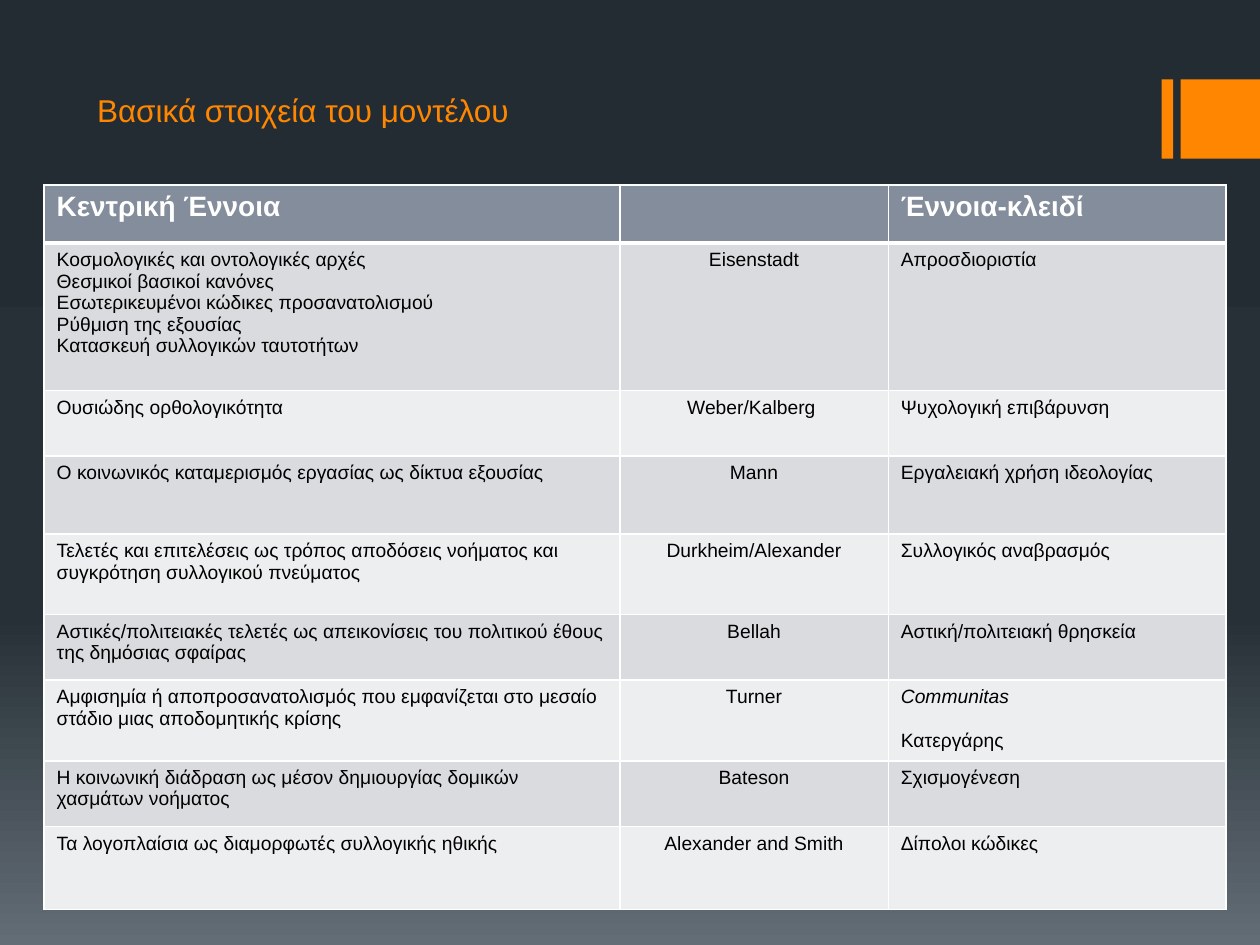
from copy import deepcopy
from dataclasses import dataclass

from lxml.etree import SubElement
from pptx import Presentation
from pptx.dml.color import RGBColor
from pptx.enum.shapes import MSO_SHAPE as Shape
from pptx.enum.text import MSO_ANCHOR as Anchor, PP_ALIGN as Align
from pptx.oxml.ns import qn
from pptx.util import Inches, Pt

COLORS = {
    "accent": "FF8600",
    "header": "838D9B",
    "odd": "D9DBDE",
    "even": "EDEEEF",
    "white": "FFFFFF",
    "black": "000000",
}
BACKGROUND = [(0, "242C33"), (65, "273037"), (100, "636D76")]
FONT = "Arial"
WIDTH, HEIGHT = Inches(10), Inches(7.5)
COLUMNS = (4.57, 2.13, 2.68)
HEADER_HEIGHT = 0.46
TABLE_LEFT, TABLE_TOP = 0.35, 1.47
BAR_TOP, BAR_SIDE = 0.63, 0.63
BAR_SPANS = ((9.22, 0.09), (9.37, BAR_SIDE))


@dataclass(frozen=True)
class Entry:
    """One table row: a central concept, its author and the key concept."""
    height: float
    concept: str
    author: str
    key: str
    key_second: str = ""


ENTRIES = [
    Entry(1.17, "Κοσμολογικές και οντολογικές αρχές\n"
          "Θεσμικοί βασικοί κανόνες\n"
          "Εσωτερικευμένοι κώδικες προσανατολισμού\n"
          "Ρύθμιση της εξουσίας\n"
          "Κατασκευή συλλογικών ταυτοτήτων",
          "Eisenstadt", "Απροσδιοριστία"),
    Entry(0.52, "Ουσιώδης ορθολογικότητα", "Weber/Kalberg ",
          "Ψυχολογική επιβάρυνση"),
    Entry(0.62, "Ο κοινωνικός καταμερισμός εργασίας ως δίκτυα εξουσίας",
          "Mann", "Εργαλειακή χρήση ιδεολογίας"),
    Entry(0.64, "Τελετές και επιτελέσεις ως τρόπος αποδόσεις νοήματος και "
          "συγκρότηση συλλογικού πνεύματος",
          "Durkheim/Alexander", "Συλλογικός αναβρασμός"),
    Entry(0.52, "Αστικές/πολιτειακές τελετές ως απεικονίσεις του πολιτικού "
          "έθους της δημόσιας σφαίρας",
          "Bellah", "Αστική/πολιτειακή θρησκεία"),
    Entry(0.64, "Αμφισημία ή αποπροσανατολισμός που εμφανίζεται στο μεσαίο "
          "στάδιο μιας αποδομητικής κρίσης",
          "Turner", "Communitas", "Κατεργάρης"),
    Entry(0.52, "Η κοινωνική διάδραση ως μέσον δημιουργίας δομικών "
          "χασμάτων νοήματος", "Bateson", "Σχισμογένεση"),
    Entry(0.66, "Τα λογοπλαίσια ως διαμορφωτές συλλογικής ηθικής",
          "Alexander and Smith", "Δίπολοι κώδικες"),
]


def rgb(name: str) -> RGBColor:
    return RGBColor.from_string(COLORS[name])


def write(frame, text: str, *, size: float = 11, color: str = "black",
          bold: bool = False, italic: bool = False, align=Align.LEFT,
          before: float = 0, append: bool = False) -> None:
    """Put each line of text in its own paragraph, all in one format."""
    for number, line in enumerate(text.split("\n")):
        fresh = append or number > 0
        para = frame.add_paragraph() if fresh else frame.paragraphs[0]
        para.alignment = align
        para.space_before = Pt(before)
        span = para.add_run()
        span.text = line
        font = span.font
        font.name, font.size = FONT, Pt(size)
        font.bold, font.italic = bold, italic
        font.color.rgb = rgb(color)


def paint_background(slide) -> None:
    fill = slide.background.fill
    fill.gradient()
    fill.gradient_angle = 270
    stops = slide.element.find(".//" + qn("a:gsLst"))
    stops.insert(1, deepcopy(stops[0]))
    for stop, (position, color) in zip(fill.gradient_stops, BACKGROUND):
        stop.position = position / 100
        stop.color.rgb = RGBColor.from_string(color)


def add_bar(slide, left: float, width: float) -> None:
    bar = slide.shapes.add_shape(Shape.RECTANGLE, Inches(left), Inches(BAR_TOP),
                                 Inches(width), Inches(BAR_SIDE))
    bar.shadow.inherit = False
    bar.fill.solid()
    bar.fill.fore_color.rgb = rgb("accent")
    bar.line.fill.background()


def style_cell(cell, fill: str, *, top: float = 1, bottom: float = 1) -> None:
    """Draw white borders, in points, and then the fill."""
    properties = cell._tc.get_or_add_tcPr()
    for side, points in (("L", 1), ("R", 1), ("T", top), ("B", bottom)):
        line = SubElement(properties, qn(f"a:ln{side}"), w=str(Pt(points)))
        solid = SubElement(line, qn("a:solidFill"))
        SubElement(solid, qn("a:srgbClr"), val=COLORS["white"])
    cell.fill.solid()
    cell.fill.fore_color.rgb = rgb(fill)


def add_concept_table(slide) -> None:
    heights = [HEADER_HEIGHT] + [entry.height for entry in ENTRIES]
    table = slide.shapes.add_table(
        len(heights), len(COLUMNS), Inches(TABLE_LEFT), Inches(TABLE_TOP),
        Inches(sum(COLUMNS)), Inches(sum(heights))).table
    for column, width in zip(table.columns, COLUMNS):
        column.width = Inches(width)
    for row, height in zip(table.rows, heights):
        row.height = Inches(height)

    for cell in table.rows[0].cells:
        style_cell(cell, "header", bottom=3)
    for column, heading in ((0, "Κεντρική Έννοια"), (2, "Έννοια-κλειδί")):
        write(table.cell(0, column).text_frame, heading,
              size=16, color="white", bold=True)

    for number, entry in enumerate(ENTRIES, start=1):
        cells = list(table.rows[number].cells)
        for cell in cells:
            style_cell(cell, "odd" if number % 2 else "even",
                       top=3 if number == 1 else 1)
        concept, author, key = (cell.text_frame for cell in cells)
        write(concept, entry.concept)
        write(author, entry.author, align=Align.CENTER)
        write(key, entry.key, italic=bool(entry.key_second))
        if entry.key_second:
            write(key, entry.key_second, before=12.5, append=True)


def add_title(slide) -> None:
    title = slide.shapes.title
    title.left, title.top = Inches(0.67), Inches(0.36)
    title.width, title.height = Inches(8), Inches(0.71)
    title.text_frame.vertical_anchor = Anchor.BOTTOM
    title.text_frame.word_wrap = True
    write(title.text_frame, "Βασικά στοιχεία του μοντέλου",
          size=18, color="accent")


def main() -> None:
    deck = Presentation()
    deck.slide_width, deck.slide_height = WIDTH, HEIGHT
    slide = deck.slides.add_slide(deck.slide_layouts.get_by_name("Title Only"))
    paint_background(slide)
    for left, width in BAR_SPANS:
        add_bar(slide, left, width)
    add_title(slide)
    add_concept_table(slide)
    deck.save("out.pptx")


if __name__ == "__main__":
    main()
